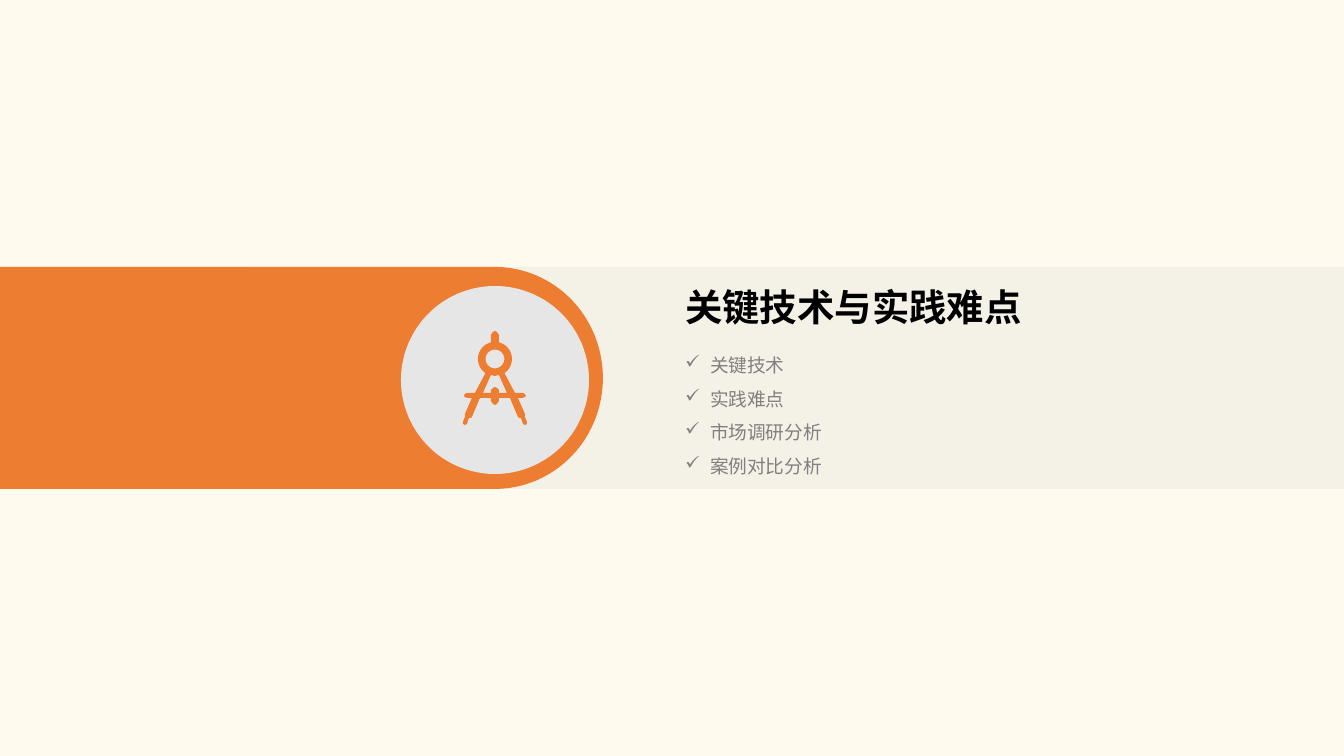
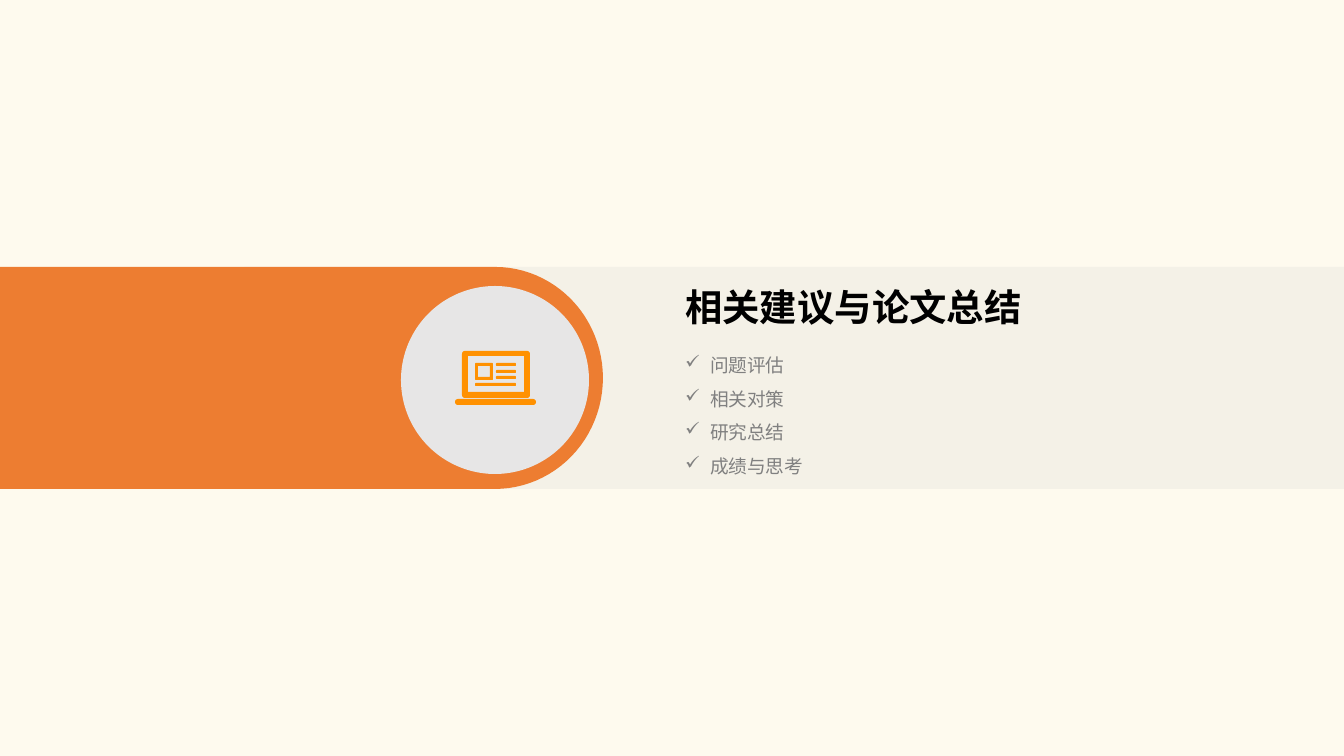
from math import cos, pi, sin

from lxml.etree import SubElement
from pptx import Presentation
from pptx.dml.color import RGBColor
from pptx.enum.shapes import MSO_SHAPE
from pptx.enum.text import MSO_AUTO_SIZE
from pptx.oxml.ns import qn
from pptx.util import Pt

PX = 914400 / 134.4
SLIDE_WIDTH, SLIDE_HEIGHT = 1344, 756
BAND_BOX = (0, 267, SLIDE_WIDTH, 222)
FONT = "Roboto Condensed"
COLORS = {
    "background": "FEFAEE",
    "band": "D0CECE",
    "tab": "ED7D31",
    "badge": "E7E6E6",
    "compass": "ED7D31",
    "laptop": "FF9101",
    "title": "000000",
    "topic": "808080",
}


def px(length):
    return round(length * PX)


def color(name):
    return RGBColor.from_string(COLORS[name])


# Outline geometry

def arc(center_x, center_y, radius_x, radius_y, start=0, end=2 * pi, steps=48):
    """Points along an ellipse; angles run clockwise from the right."""
    angles = [start + (end - start) * i / steps for i in range(steps + 1)]
    return [(center_x + radius_x * cos(a), center_y + radius_y * sin(a)) for a in angles]


def rounded(left, top, width, height, radius=0):
    if not radius:
        return [(left, top), (left + width, top),
                (left + width, top + height), (left, top + height)]
    x1, x2 = left + radius, left + width - radius
    y1, y2 = top + radius, top + height - radius
    corners = [(x2, y2), (x1, y2), (x1, y1), (x2, y1)]
    return [point for i, (x, y) in enumerate(corners)
            for point in arc(x, y, radius, radius, i * pi / 2, (i + 1) * pi / 2, 6)]


def mirrored(right_half):
    return right_half + [(-x, y) for x, y in reversed(right_half)]


def compass_contours():
    ring_y = 28
    tip = [(0, 0), (2, 1), (4, 4)]
    ring = arc(0, ring_y, 17, 17, -1.33, 0.98, 24)
    leg = [(20, 62), (28, 62), (30, 63), (31, 65), (30, 66), (28, 67), (23, 67),
           (30, 83), (30, 86), (32, 91), (32, 93), (30, 94), (28, 93), (26, 87),
           (24, 87), (23, 86), (15, 67)]
    nub = [(4, 67), (4, 70), (2, 73), (0, 74)]
    gap = [(0, 45), (4, 44), (12, 62), (4, 62), (4, 59), (2, 57), (0, 56)]
    return [mirrored(tip + ring + leg + nub), mirrored(gap), arc(0, ring_y, 9.4, 9.4)]


def laptop_contours():
    screen = [rounded(7, 0, 68, 47, 3), rounded(13, 5, 56, 36)]
    photo = [rounded(20, 12, 18, 17, 1), rounded(23, 15, 12, 11)]
    text_lines = [rounded(41, top, 20, 3, 1) for top in (12, 19, 25)]
    caption = rounded(20, 32, 41, 3, 1)
    base = rounded(0, 48, 81, 6, 3)
    return screen + photo + text_lines + [caption, base]


# Drawing helpers

def paint(shape, color_name):
    shape.shadow.inherit = False
    shape.fill.solid()
    shape.fill.fore_color.rgb = color(color_name)
    shape.line.fill.background()
    return shape


def add_preset(shapes, kind, box, color_name):
    return paint(shapes.add_shape(kind, *map(px, box)), color_name)


def add_outline(shapes, contours, left, top, color_name):
    """Draw closed contours as one shape; nested contours become holes."""
    placed = [[(px(left + x), px(top + y)) for x, y in contour] for contour in contours]
    builder = shapes.build_freeform(*placed[0][0])
    for index, contour in enumerate(placed):
        if index:
            builder.move_to(*contour[0])
        builder.add_line_segments(contour[1:], close=True)
    return paint(builder.convert_to_shape(), color_name)


def add_text(slide, box, text, size, color_name, bold=False, wrap=True):
    text_frame = slide.shapes.add_textbox(*map(px, box)).text_frame
    text_frame.word_wrap = wrap
    text_frame.auto_size = MSO_AUTO_SIZE.SHAPE_TO_FIT_TEXT
    text_frame.text = text
    for paragraph in text_frame.paragraphs:
        for run in paragraph.runs:
            run.font.name = FONT
            run.font.size = Pt(size)
            run.font.bold = bold
            run.font.color.rgb = color(color_name)
    return text_frame


def add_check_bullet(paragraph):
    paragraph.line_spacing = 1.5
    properties = paragraph._p.get_or_add_pPr()
    properties.set("marL", str(px(25)))
    properties.set("indent", str(-px(25)))
    SubElement(properties, qn("a:buChar")).set("char", "✓")


# Regions of a section slide

def add_band(slide, box):
    left, top, width, height = box
    # Translucent strip
    strip = add_preset(slide.shapes, MSO_SHAPE.RECTANGLE,
                       (left + 245, top, width - 245, height), "band")
    fill_color = strip._element.spPr.find(qn("a:solidFill"))[0]
    SubElement(fill_color, qn("a:alpha")).set("val", "20000")
    # Tab with a round end
    radius = height / 2
    tab = [(0, 0), *arc(495, radius, 108, radius, -pi / 2, pi / 2), (0, height)]
    add_outline(slide.shapes, [tab], left, top, "tab")


def add_heading(slide, box, title, topics, list_width):
    left, top = box[0] + 672, box[1]
    topic_list = add_text(slide, (left, top + 69, list_width, 149), "\n".join(topics),
                          10, "topic", wrap=False)
    for paragraph in topic_list.paragraphs:
        add_check_bullet(paragraph)
    add_text(slide, (left, top + 11, 434, 59), title, 20, "title", bold=True)


def add_badge(slide, box, contours, icon_left, icon_top, icon_color):
    left, top = box[0] + 401, box[1] + 19
    badge = slide.shapes.add_group_shape()
    add_preset(badge.shapes, MSO_SHAPE.OVAL, (left, top, 188, 188), "badge")
    add_outline(badge.shapes, contours, left + icon_left, top + icon_top, icon_color)


def add_section_slide(presentation, title, topics, list_width, icon):
    slide = presentation.slides.add_slide(presentation.slide_layouts[6])
    slide.background.fill.solid()
    slide.background.fill.fore_color.rgb = color("background")
    add_band(slide, BAND_BOX)
    add_heading(slide, BAND_BOX, title, topics, list_width)
    add_badge(slide, BAND_BOX, *icon)


def main():
    presentation = Presentation()
    presentation.slide_width = px(SLIDE_WIDTH)
    presentation.slide_height = px(SLIDE_HEIGHT)
    add_section_slide(presentation, "关键技术与实践难点",
                      ["关键技术", "实践难点", "市场调研分析", "案例对比分析"], 165,
                      (compass_contours(), 94, 45, "compass"))
    add_section_slide(presentation, "相关建议与论文总结",
                      ["问题评估", "相关对策", "研究总结", "成绩与思考"], 147,
                      (laptop_contours(), 54, 65, "laptop"))
    presentation.save("out.pptx")


if __name__ == "__main__":
    main()
